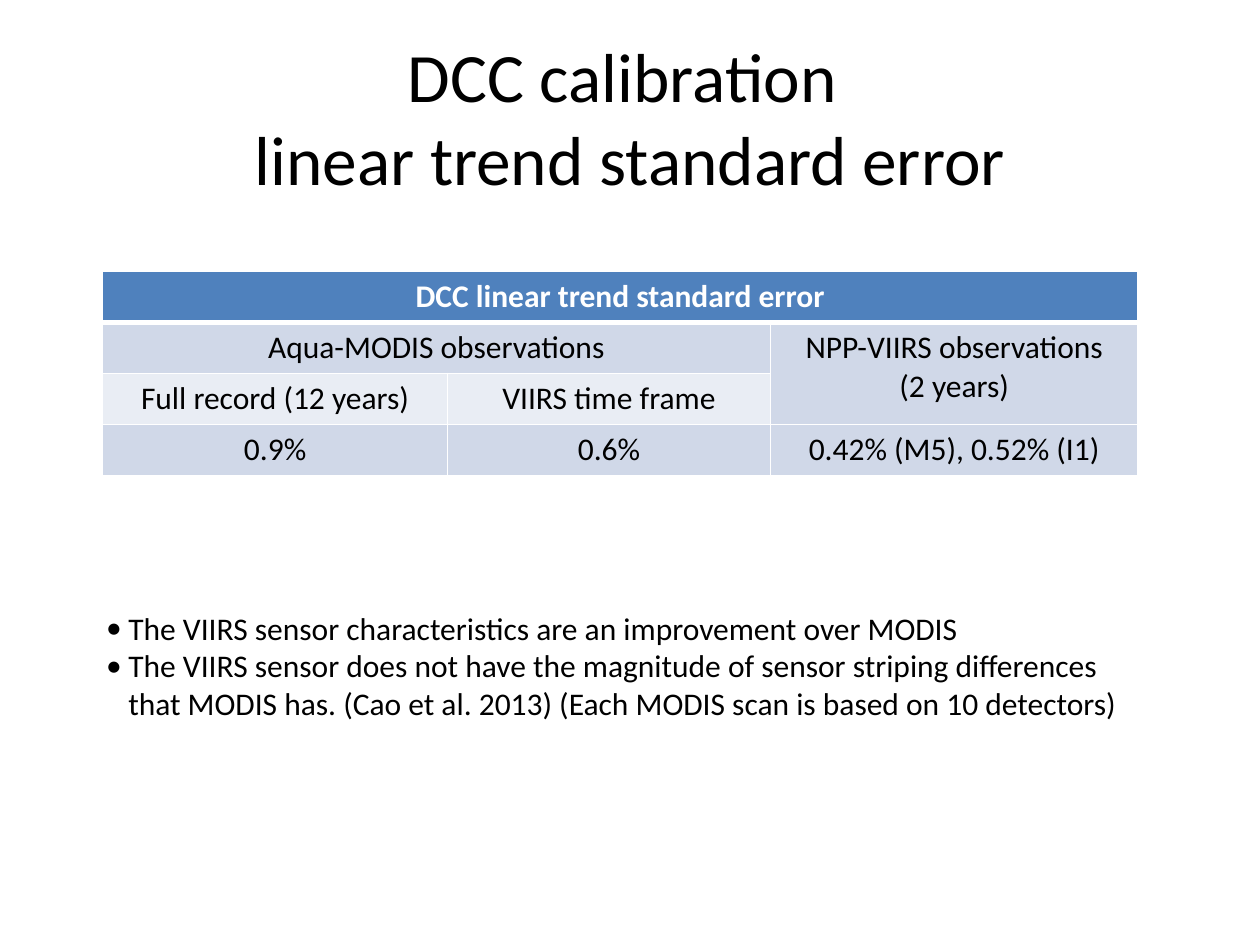
from lxml import etree
from pptx import Presentation
from pptx.dml.color import RGBColor
from pptx.enum.text import MSO_ANCHOR, MSO_AUTO_SIZE, PP_ALIGN
from pptx.oxml.ns import qn
from pptx.util import Pt

CENTER, LEFT = PP_ALIGN.CENTER, PP_ALIGN.LEFT
MIDDLE, TOP = MSO_ANCHOR.MIDDLE, MSO_ANCHOR.TOP
BLACK = RGBColor(0, 0, 0)
WHITE = RGBColor(255, 255, 255)
HEADER_BLUE = RGBColor(0x4F, 0x81, 0xBD)
BAND_DARK = RGBColor(0xD0, 0xD8, 0xE8)
BAND_LIGHT = RGBColor(0xE9, 0xED, 0xF4)
FONT = "Calibri"
BULLET_INDENT = 12.6

TITLE = "DCC calibration \vlinear trend standard error"
ROWS = [
    ["DCC linear trend standard error", None, None],
    ["Aqua-MODIS observations", None, "NPP-VIIRS observations\n(2 years)"],
    ["Full record (12 years)", "VIIRS time frame", None],
    ["0.9%", "0.6%", "0.42% (M5), 0.52% (I1)"],
]
ROW_FILLS = [HEADER_BLUE, BAND_DARK, BAND_LIGHT, BAND_DARK]
MERGES = [((0, 0), (0, 2)), ((1, 0), (1, 1)), ((1, 2), (2, 2))]
COLUMN_WIDTHS = [197.28, 184.32, 210.24]
ROW_HEIGHT = 29.2
POINTS = [
    "The VIIRS sensor characteristics are an improvement over MODIS",
    "The VIIRS sensor does not have the magnitude of sensor striping differences "
    "that MODIS has. (Cao et al. 2013) (Each MODIS scan is based on 10 detectors)",
]


def write(frame, text, size=18, color=BLACK, bold=False, align=CENTER, bullet=None):
    frame.text = text
    for para in frame.paragraphs:
        if bullet:
            properties = para._p.get_or_add_pPr()
            properties.set("marL", str(Pt(BULLET_INDENT)))
            properties.set("indent", str(-Pt(BULLET_INDENT)))
            etree.SubElement(properties, qn("a:buFont")).set("typeface", FONT)
            etree.SubElement(properties, qn("a:buChar")).set("char", bullet)
        para.alignment = align
        para.space_before = Pt(0)
        for span in para.runs:
            span.font.name = FONT
            span.font.size = Pt(size)
            span.font.bold = bold
            span.font.color.rgb = color


def place(shape, left, top, width, height):
    shape.left, shape.top = Pt(left), Pt(top)
    shape.width, shape.height = Pt(width), Pt(height)


def border(cell, bottom_width):
    properties = cell._tc.get_or_add_tcPr()
    widths = {"a:lnL": 1, "a:lnR": 1, "a:lnT": 1, "a:lnB": bottom_width}
    for index, (tag, width) in enumerate(widths.items()):
        line = etree.Element(qn(tag), w=str(Pt(width)))
        fill = etree.SubElement(line, qn("a:solidFill"))
        etree.SubElement(fill, qn("a:srgbClr")).set("val", str(WHITE))
        properties.insert(index, line)


def add_table(page):
    frame = page.shapes.add_table(
        len(ROWS), len(COLUMN_WIDTHS), Pt(58.6), Pt(155),
        Pt(sum(COLUMN_WIDTHS)), Pt(ROW_HEIGHT * len(ROWS)))
    table = frame.table
    for column, width in zip(table.columns, COLUMN_WIDTHS):
        column.width = Pt(width)
    for r, (texts, fill) in enumerate(zip(ROWS, ROW_FILLS)):
        header = r == 0
        table.rows[r].height = Pt(ROW_HEIGHT)
        for c, text in enumerate(texts):
            cell = table.cell(r, c)
            cell.fill.solid()
            cell.fill.fore_color.rgb = fill
            border(cell, 3 if header else 1)
            if text:
                write(cell.text_frame, text, bold=header, color=WHITE if header else BLACK)
    for first, last in MERGES:
        table.cell(*first).merge(table.cell(*last))


def main():
    deck = Presentation()
    deck.slide_width, deck.slide_height = Pt(720), Pt(540)
    page = deck.slides.add_slide(deck.slide_layouts[1])

    title = page.shapes.title
    place(title, 36, 21.6, 648, 90)
    title.text_frame.vertical_anchor = MIDDLE
    title.text_frame.auto_size = MSO_AUTO_SIZE.NONE
    write(title.text_frame, TITLE, size=39.6)

    add_table(page)

    body = page.placeholders[1]
    place(body, 53.5, 344.2, 595.5, 72.7)
    body.text_frame.vertical_anchor = TOP
    body.text_frame.word_wrap = True
    body.text_frame.auto_size = MSO_AUTO_SIZE.SHAPE_TO_FIT_TEXT
    write(body.text_frame, "\n".join(POINTS), align=LEFT, bullet="•")

    deck.save("out.pptx")


if __name__ == "__main__":
    main()
